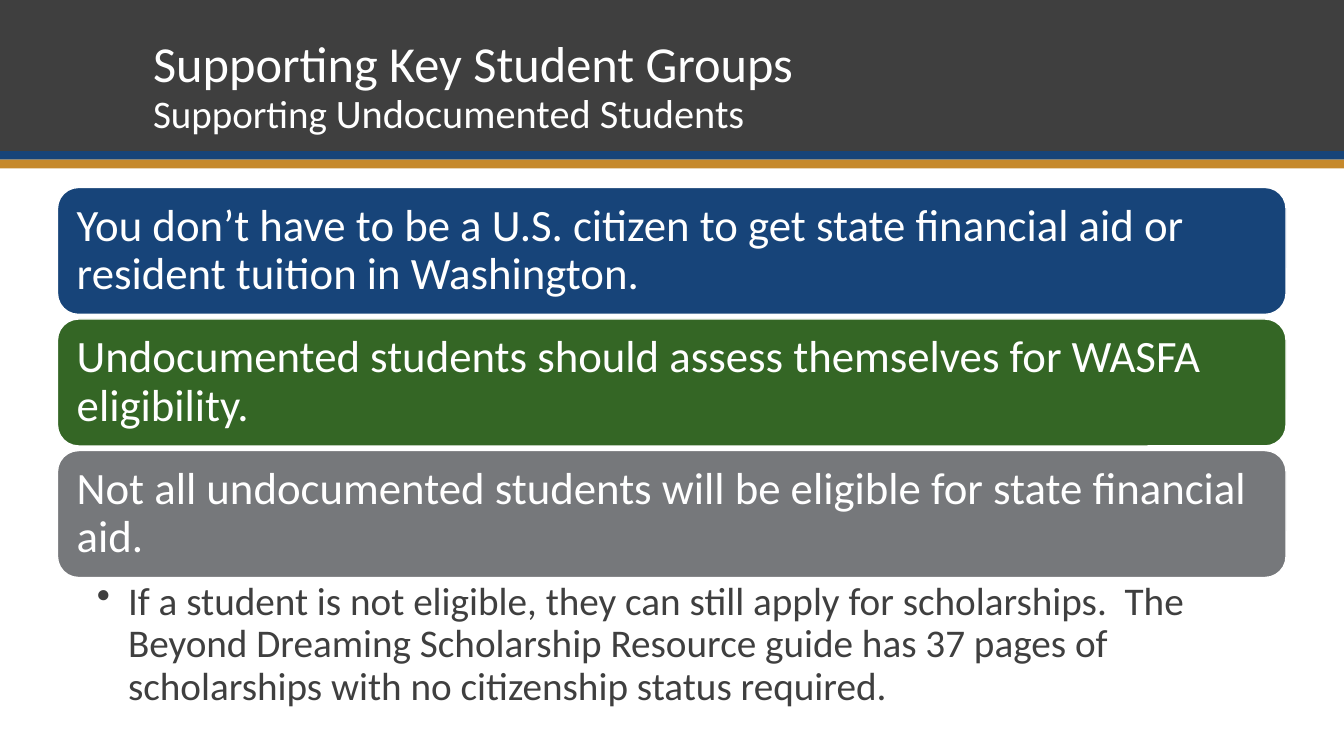
"""Builds a slide on supporting undocumented students."""
import pptx
import pptx.dml.color
import pptx.enum.shapes
import pptx.enum.text
import pptx.oxml
import pptx.oxml.ns
import pptx.util

PX = 4572
PAGE_WIDTH, PAGE_HEIGHT = 2667, 1500
FONT = "Calibri"
COLORS = {
    "charcoal": "3F3F3F",
    "blue": "174479",
    "gold": "C6892B",
    "green": "346625",
    "gray": "76787B",
    "white": "FFFFFF",
}
HEADER_BARS = [(0, 300, "charcoal"), (300, 17, "blue"), (317, 17, "gold")]
BAND_LEFT, BAND_TOP, BAND_WIDTH, BAND_HEIGHT, BAND_PITCH = 114, 372, 2438, 252, 261
BANDS = [
    ("You don’t have to be a U.S. citizen to get state financial aid or "
     "resident tuition in Washington.", "blue"),
    ("Undocumented students should assess themselves for WASFA eligibility.", "green"),
    ("Not all undocumented students will be eligible for state financial aid.", "gray"),
]
DETAIL = ("If a student is not eligible, they can still apply for scholarships.  The "
          "Beyond Dreaming Scholarship Resource guide has 37 pages of scholarships "
          "with no citizenship status required.")


def px(*lengths):
    """Turn whole px into EMU."""
    return [pptx.util.Emu(length * PX) for length in lengths]


def color(name):
    """Look up a named colour."""
    return pptx.dml.color.RGBColor.from_string(COLORS[name])


def style(font, size, color_name):
    """Set face, size and colour of a font."""
    font.name = FONT
    font.size = pptx.util.Pt(size)
    font.color.rgb = color(color_name)


def set_frame(frame, anchor, insets):
    """Wrap a text frame, set its anchor and insets, and return its paragraph."""
    frame.word_wrap = True
    frame.vertical_anchor = anchor
    (frame.margin_left, frame.margin_top,
     frame.margin_right, frame.margin_bottom) = px(*insets)
    para = frame.paragraphs[0]
    para.alignment = pptx.enum.text.PP_ALIGN.LEFT
    para.line_spacing = 0.9
    return para


def add_block(page, kind, place, fill):
    """Add a filled shape without outline or shadow."""
    block = page.shapes.add_shape(kind, *px(*place))
    block.shadow.inherit = False
    block.fill.solid()
    block.fill.fore_color.rgb = color(fill)
    block.line.fill.background()
    return block


def add_title(page):
    """Add the two-line heading."""
    box = page.shapes.add_textbox(*px(284, 56, 2100, 226))
    para = set_frame(box.text_frame, pptx.enum.text.MSO_ANCHOR.BOTTOM, (20, 10, 20, 10))
    heading = para.add_run()
    heading.text = "Supporting Key Student Groups"
    style(heading.font, 36, "white")
    para.add_line_break()
    for words, size in [("Supporting ", 27.9), ("Undocumented Students", 28.8)]:
        span = para.add_run()
        span.text = words
        style(span.font, size, "white")


def add_band(page, top, words, fill):
    """Add one rounded statement band."""
    band = add_block(page, pptx.enum.shapes.MSO_SHAPE.ROUNDED_RECTANGLE,
                     (BAND_LEFT, top, BAND_WIDTH, BAND_HEIGHT), fill)
    band.line.color.rgb = color("white")
    band.line.width = pptx.util.Pt(1)
    para = set_frame(band.text_frame, pptx.enum.text.MSO_ANCHOR.MIDDLE, (26, 26, 26, 26))
    para.text = words
    style(para.font, 32, "white")


def add_bullet(page, top, words):
    """Add the bulleted detail below the bands."""
    box = page.shapes.add_textbox(*px(BAND_LEFT, top, BAND_WIDTH, 248))
    para = set_frame(box.text_frame, pptx.enum.text.MSO_ANCHOR.TOP, (78, 8, 44, 8))
    para.text = words
    para.level = 1
    indent = px(62)[0]
    properties = para._p.get_or_add_pPr()
    properties.set("marL", str(indent))
    properties.set("indent", str(-indent))
    bullet = pptx.oxml.parse_xml(
        f'<a:buChar {pptx.oxml.ns.nsdecls("a")} char="•"/>')
    properties.append(bullet)
    style(para.font, 28, "charcoal")


def main():
    """Build and save the slide."""
    deck = pptx.Presentation()
    deck.slide_width, deck.slide_height = px(PAGE_WIDTH, PAGE_HEIGHT)
    page = deck.slides.add_slide(deck.slide_layouts[6])
    for top, height, fill in HEADER_BARS:
        add_block(page, pptx.enum.shapes.MSO_SHAPE.RECTANGLE,
                  (0, top, PAGE_WIDTH, height), fill)
    add_title(page)
    for index, (words, fill) in enumerate(BANDS):
        add_band(page, BAND_TOP + index * BAND_PITCH, words, fill)
    last_top = BAND_TOP + (len(BANDS) - 1) * BAND_PITCH
    add_bullet(page, last_top + BAND_HEIGHT, DETAIL)
    deck.save("out.pptx")


if __name__ == "__main__":
    main()
